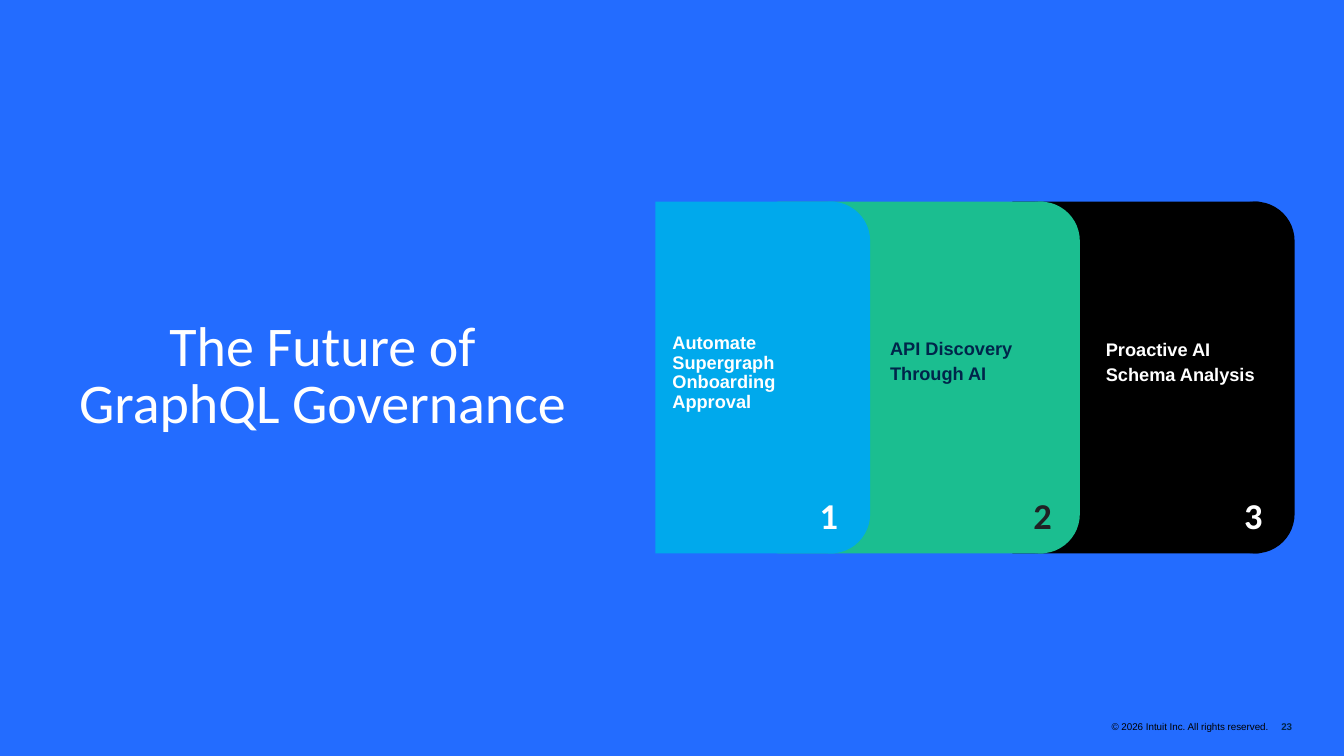
import pptx
import pptx.dml.color
import pptx.enum.shapes
import pptx.enum.text
import pptx.util

Inches = pptx.util.Inches
Align = pptx.enum.text.PP_ALIGN
Anchor = pptx.enum.text.MSO_ANCHOR
Preset = pptx.enum.shapes.MSO_SHAPE

PANEL_TOP, PANEL_HEIGHT = 2, 3.49
CAP_WIDTH, CAP_OVERLAP = 0.78, 0.43
NUMBER_TOP, NUMBER_WIDTH, NUMBER_HEIGHT = 4.88, 0.38, 0.45


def color(value):
    return pptx.dml.color.RGBColor.from_string(value)


def set_attributes(target, values):
    for name, value in values.items():
        setattr(target, name, value)


def write_text(shape, text, size, fill, font="Arial", bold=False,
               align=Align.LEFT, spacing=1.0, anchor=Anchor.MIDDLE,
               margins=(0, 0)):
    """Fill a text shape; margins are the horizontal and vertical insets."""
    horizontal, vertical = map(Inches, margins)
    frame = shape.text_frame
    set_attributes(frame, {
        "word_wrap": True,
        "auto_size": pptx.enum.text.MSO_AUTO_SIZE.NONE,
        "vertical_anchor": anchor,
        "margin_left": horizontal,
        "margin_right": horizontal,
        "margin_top": vertical,
        "margin_bottom": vertical,
    })
    paragraph = frame.paragraphs[0]
    set_attributes(paragraph, {"alignment": align, "line_spacing": spacing})
    run = paragraph.add_run()
    run.text = text
    set_attributes(run.font, {
        "name": font, "size": pptx.util.Pt(size), "bold": bold})
    run.font.color.rgb = color(fill)


def add_text(shapes, box, text, size, fill, **style):
    shape = shapes.add_textbox(*map(Inches, box))
    write_text(shape, text, size, fill, **style)


def add_block(shapes, preset, left, width, fill):
    shape = shapes.add_shape(preset, Inches(left), Inches(PANEL_TOP),
                             Inches(width), Inches(PANEL_HEIGHT))
    shape.shadow.inherit = False
    shape.fill.solid()
    shape.fill.fore_color.rgb = color(fill)
    shape.line.fill.background()
    return shape


def add_panel(slide, number, left, cap_left, fill, number_left, number_color,
              caption, caption_box, caption_color, caption_style):
    """Draw a numbered panel whose right end is rounded by a cap."""
    shapes = slide.shapes.add_group_shape().shapes
    add_block(shapes, Preset.RECTANGLE, left,
              cap_left + CAP_OVERLAP - left, fill)
    cap = add_block(shapes, Preset.ROUNDED_RECTANGLE, cap_left, CAP_WIDTH, fill)
    cap.adjustments[0] = 0.5
    add_text(shapes, (number_left, NUMBER_TOP, NUMBER_WIDTH, NUMBER_HEIGHT),
             str(number), 26, number_color, font="Calibri", bold=True)
    add_text(shapes, caption_box, caption, 13, caption_color, bold=True,
             anchor=Anchor.TOP, **caption_style)


def add_title(slide, text):
    title = slide.shapes.title
    set_attributes(title, {"left": Inches(0.57), "top": Inches(2.57),
                           "width": Inches(5.26), "height": Inches(2.35)})
    write_text(title, text, 40, "FFFFFF", font="Calibri", align=Align.CENTER,
               spacing=0.85, margins=(0.1, 0.05))


def add_footer(slide):
    add_text(slide.shapes, (9.91, 6.94, 2.67, 0.53),
             "© 2026 Intuit Inc. All rights reserved.", 7, "000000",
             align=Align.RIGHT, margins=(0, 0.05))
    add_text(slide.shapes, (12.61, 7.11, 0.39, 0.2), "23", 7, "00254A",
             bold=True, margins=(0.1, 0.05))


def main():
    presentation = pptx.Presentation()
    presentation.slide_width = Inches(13.33)
    presentation.slide_height = Inches(7.5)
    slide = presentation.slides.add_slide(presentation.slide_layouts[5])
    slide.background.fill.solid()
    slide.background.fill.fore_color.rgb = color("236CFF")

    add_footer(slide)
    add_title(slide, "The Future of GraphQL Governance")

    open_style = {"spacing": 1.15, "margins": (0.1, 0)}
    tight_style = {"spacing": 0.9}
    # Back to front: each panel covers the left end of the one before it.
    panels = [
        (3, 10.04, 12.06, "000000", 12.34, "FFFFFF",
         "Proactive AI Schema Analysis", (10.87, 3.32, 1.81, 0.83),
         "FFFFFF", open_style),
        (2, 7.71, 9.93, "1BBE90", 10.25, "202124",
         "API Discovery Through AI", (8.73, 3.31, 1.81, 0.79),
         "00254A", open_style),
        (1, 6.5, 7.85, "00A9EC", 8.13, "FFFFFF",
         "Automate Supergraph Onboarding Approval", (6.67, 3.31, 1.3, 0.8),
         "FFFFFF", tight_style),
    ]
    for panel in panels:
        add_panel(slide, *panel)

    presentation.save("out.pptx")


if __name__ == "__main__":
    main()
